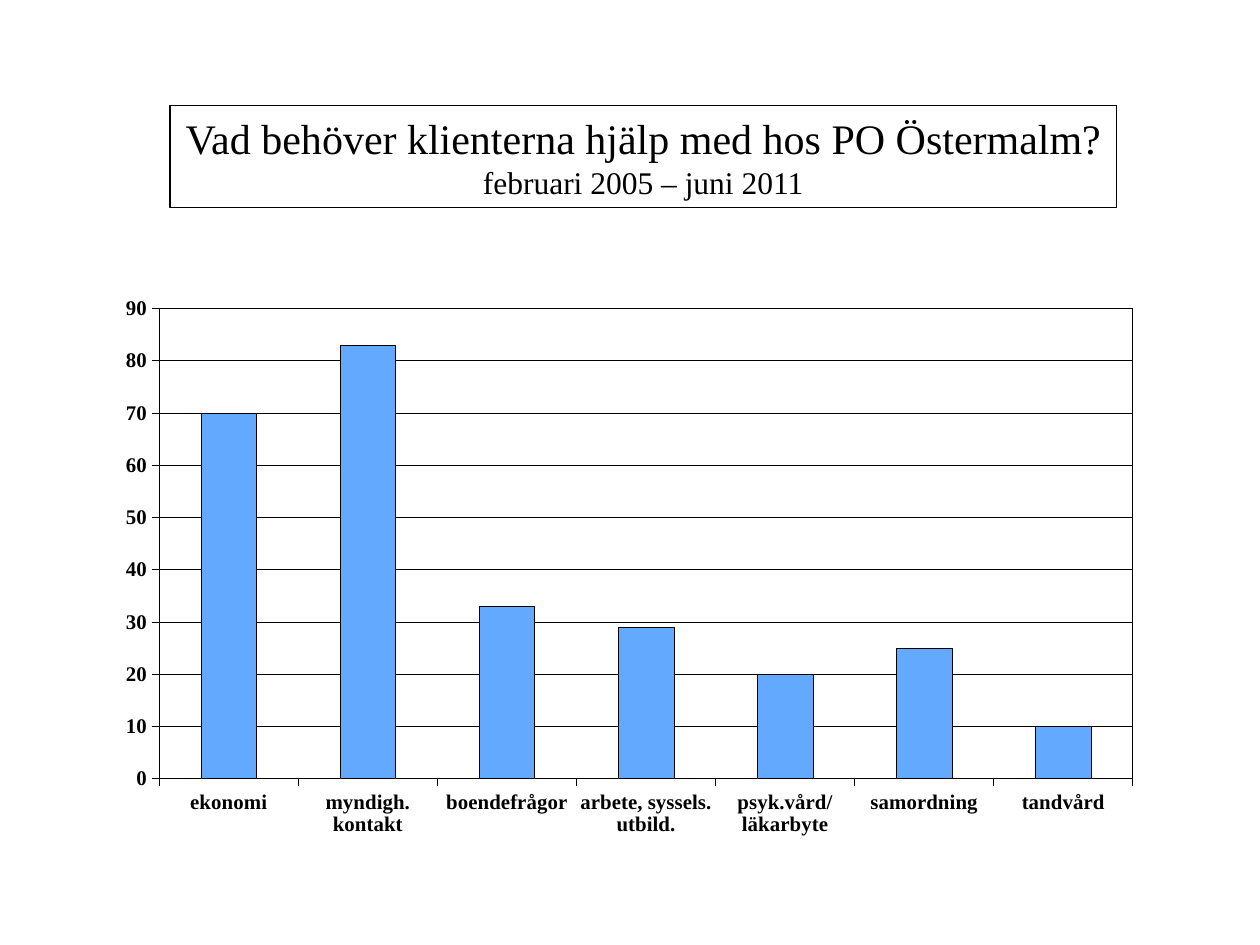
from dataclasses import dataclass

from lxml import etree
from pptx import Presentation
from pptx.chart.data import CategoryChartData
from pptx.dml.color import RGBColor
from pptx.enum.chart import XL_CHART_TYPE, XL_TICK_MARK
from pptx.enum.shapes import MSO_SHAPE
from pptx.enum.text import MSO_ANCHOR, MSO_AUTO_SIZE, PP_ALIGN
from pptx.oxml import parse_xml
from pptx.util import Cm, Pt

COLUMNS = XL_CHART_TYPE.COLUMN_CLUSTERED
TICK_OUTSIDE, TICK_NONE = XL_TICK_MARK.OUTSIDE, XL_TICK_MARK.NONE
RECTANGLE = MSO_SHAPE.RECTANGLE
MIDDLE, CENTER = MSO_ANCHOR.MIDDLE, PP_ALIGN.CENTER
FIT_SHAPE = MSO_AUTO_SIZE.SHAPE_TO_FIT_TEXT
CHART_NS = "http://schemas.openxmlformats.org/drawingml/2006/chart"
DRAWING_NS = "http://schemas.openxmlformats.org/drawingml/2006/main"


@dataclass(frozen=True)
class Theme:
    font: str = "Times New Roman"
    ink: RGBColor = RGBColor(0x00, 0x00, 0x00)
    column: RGBColor = RGBColor(0x63, 0xAA, 0xFE)
    title_size: Pt = Pt(24)
    period_size: Pt = Pt(18)
    axis_size: Pt = Pt(11.9)
    border: Pt = Pt(0.75)
    hairline: Pt = Pt(0.25)


THEME = Theme()
TITLE_LINES = [
    ("Vad behöver klienterna hjälp med hos PO Östermalm?", THEME.title_size),
    ("februari 2005 – juni 2011", THEME.period_size),
]
NEEDS = {
    "ekonomi": 70,
    "myndigh. kontakt": 83,
    "boendefrågor": 33,
    "arbete, syssels. utbild.": 29,
    "psyk.vård/ läkarbyte": 20,
    "samordning": 25,
    "tandvård": 10,
}


def style_font(font, size, bold=False):
    font.name = THEME.font
    font.size = size
    font.bold = bold
    font.color.rgb = THEME.ink


def style_line(line, width):
    line.color.rgb = THEME.ink
    line.width = width


def add_title_box(slide, left, top, width, height):
    box = slide.shapes.add_shape(RECTANGLE, left, top, width, height)
    box.shadow.inherit = False
    box.fill.background()
    style_line(box.line, THEME.border)
    frame = box.text_frame
    frame.word_wrap = False
    frame.auto_size = FIT_SHAPE
    frame.vertical_anchor = MIDDLE
    for index, (text, size) in enumerate(TITLE_LINES):
        paragraph = frame.add_paragraph() if index else frame.paragraphs[0]
        paragraph.text = text
        paragraph.alignment = CENTER
        style_font(paragraph.font, size)


def frame_plot_area(chart, x, y, w, h):
    """Fix the inner plot area, in fractions of the chart, and outline it."""
    plot_area = chart.plots[0]._element.getparent()
    for layout in plot_area.findall(f"{{{CHART_NS}}}layout"):
        plot_area.remove(layout)
    layout = etree.Element(f"{{{CHART_NS}}}layout")
    manual = etree.SubElement(layout, f"{{{CHART_NS}}}manualLayout")
    settings = [("layoutTarget", "inner"), ("xMode", "edge"), ("yMode", "edge"),
                ("x", x), ("y", y), ("w", w), ("h", h)]
    for tag, value in settings:
        etree.SubElement(manual, f"{{{CHART_NS}}}{tag}", val=str(value))
    plot_area.insert(0, layout)
    plot_area.append(parse_xml(
        f'<c:spPr xmlns:c="{CHART_NS}" xmlns:a="{DRAWING_NS}"><a:noFill/>'
        f'<a:ln w="{THEME.hairline}"><a:solidFill><a:srgbClr val="{THEME.ink}"/>'
        '</a:solidFill></a:ln></c:spPr>'))


def add_needs_chart(slide, left, top, width, height):
    data = CategoryChartData()
    data.categories = list(NEEDS)
    data.add_series("Series 1", list(NEEDS.values()))
    chart = slide.shapes.add_chart(COLUMNS, left, top, width, height, data).chart
    chart.has_legend = False
    chart.has_title = False
    style_font(chart.font, THEME.axis_size, bold=True)

    plot = chart.plots[0]
    plot.vary_by_categories = False
    plot.gap_width = 150
    series = plot.series[0]
    series.format.fill.solid()
    series.format.fill.fore_color.rgb = THEME.column
    style_line(series.format.line, THEME.hairline)

    for axis in (chart.category_axis, chart.value_axis):
        axis.major_tick_mark = TICK_OUTSIDE
        axis.minor_tick_mark = TICK_NONE
        style_line(axis.format.line, THEME.hairline)
        style_font(axis.tick_labels.font, THEME.axis_size, bold=True)
    values = chart.value_axis
    values.minimum_scale, values.maximum_scale, values.major_unit = 0, 90, 10
    values.has_major_gridlines = True
    style_line(values.major_gridlines.format.line, THEME.hairline)
    frame_plot_area(chart, x=0.056, y=0.058, w=0.931, h=0.726)


def main():
    presentation = Presentation()
    presentation.slide_width = Cm(25.4)
    presentation.slide_height = Cm(19.05)
    slide = presentation.slides.add_slide(presentation.slide_layouts[6])
    add_needs_chart(slide, Cm(2.03), Cm(5.46), Cm(21.08), Cm(13.06))
    add_title_box(slide, Cm(3.43), Cm(2.13), Cm(19.08), Cm(2.06))
    presentation.save("out.pptx")


if __name__ == "__main__":
    main()
